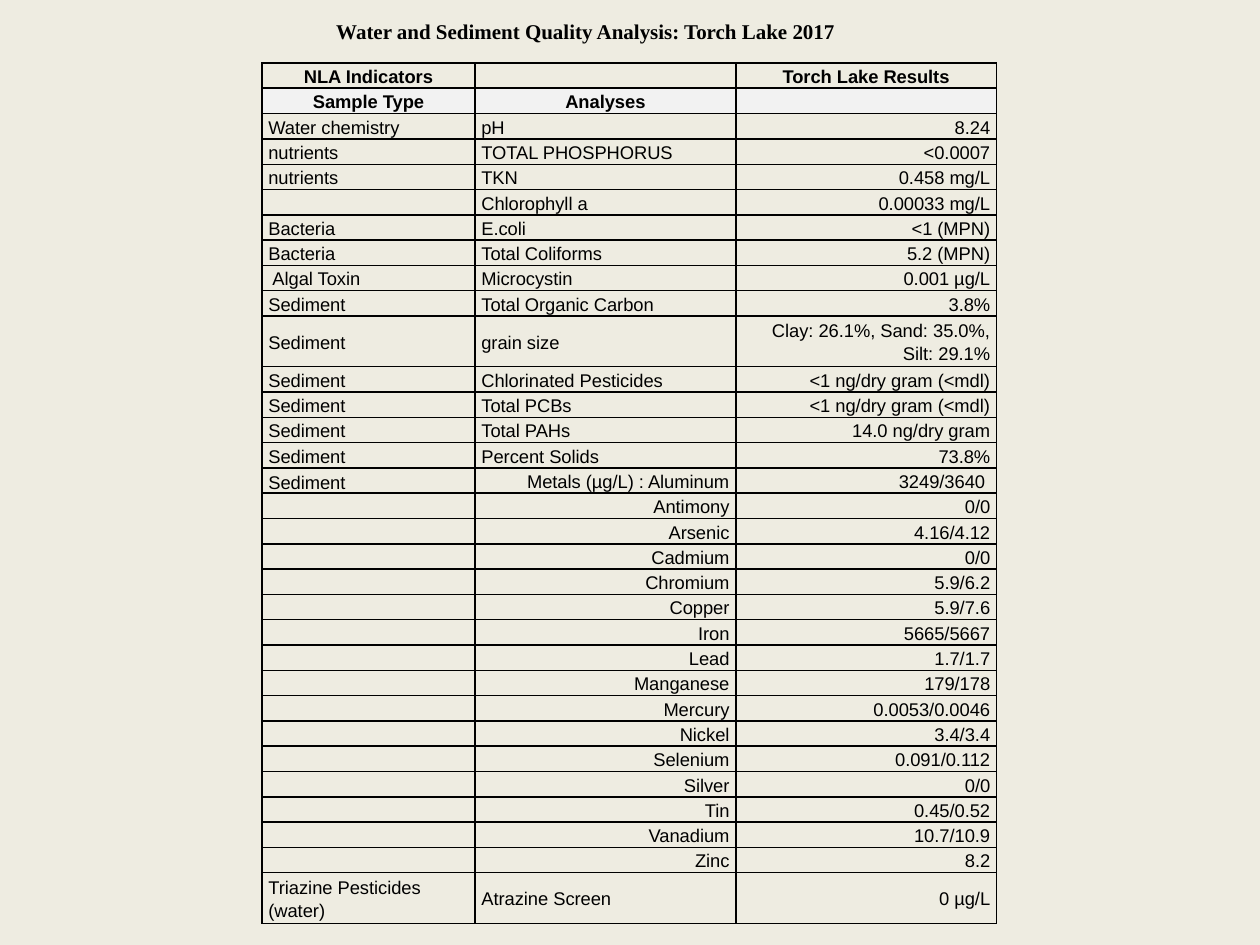
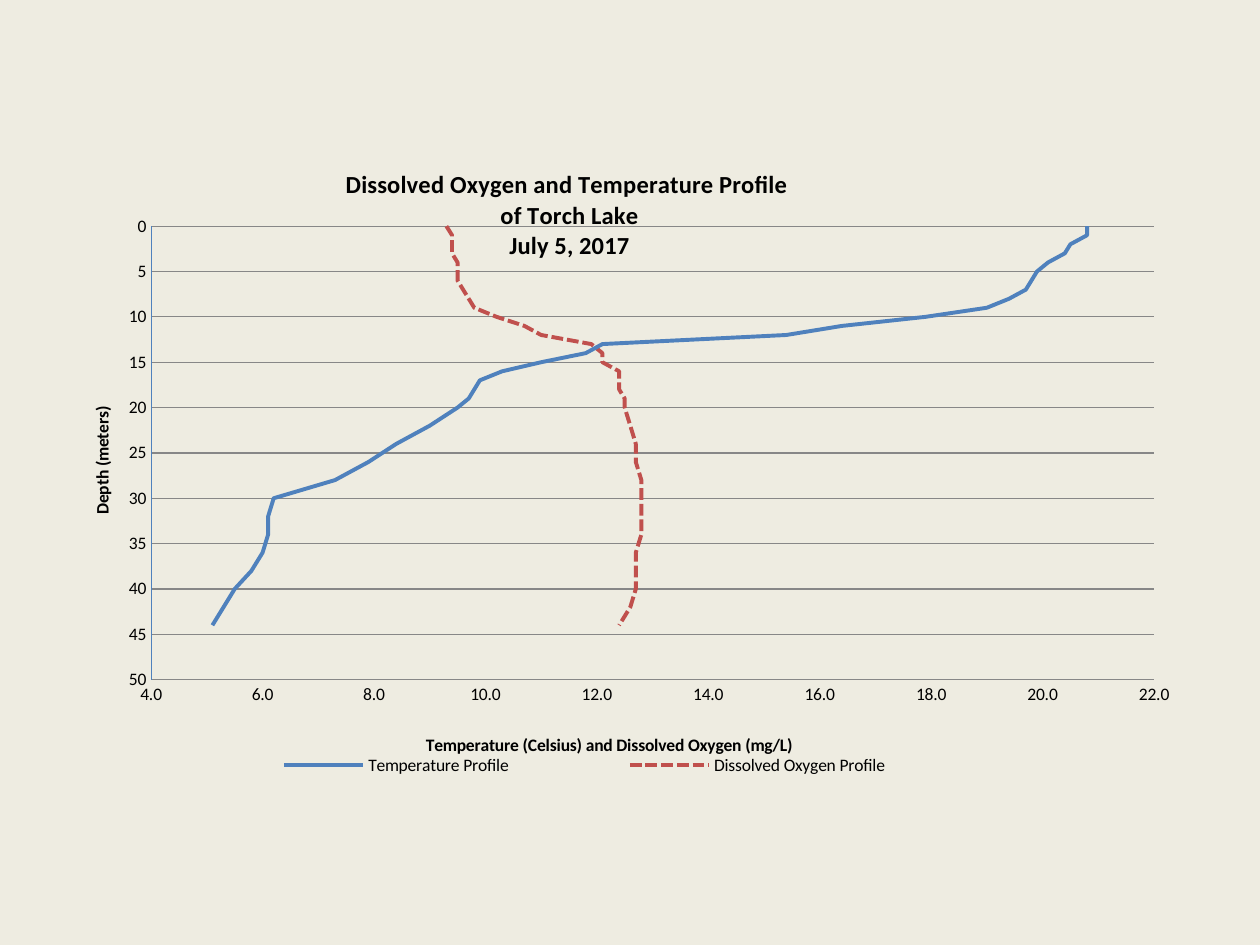
"""Build the Torch Lake water quality table and depth profile slides."""
import pptx
import pptx.chart.data
import pptx.dml.color
import pptx.enum.chart
import pptx.enum.dml
import pptx.enum.text
import pptx.oxml
import pptx.oxml.ns
import pptx.util

Pt = pptx.util.Pt
RGB = pptx.dml.color.RGBColor
ALIGN = pptx.enum.text.PP_ALIGN
ANCHOR = pptx.enum.text.MSO_ANCHOR
CH = pptx.enum.chart
qn = pptx.oxml.ns.qn
nsdecls = pptx.oxml.ns.nsdecls

CREAM = RGB(0xEE, 0xEC, 0xE1)
BLACK = RGB(0, 0, 0)
PALE = RGB(0xF2, 0xF2, 0xF2)
BLUE = RGB(0x4F, 0x81, 0xBD)
RED = RGB(0xC0, 0x50, 0x4D)
GREY = RGB(0x87, 0x87, 0x87)

HEADERS = [("NLA Indicators", "", "Torch Lake Results"),
           ("Sample Type", "Analyses", "")]
RESULTS = [
    ("Water chemistry", "pH", "8.24"),
    ("nutrients", "TOTAL PHOSPHORUS", "<0.0007"),
    ("nutrients", "TKN", "0.458 mg/L"),
    ("", "Chlorophyll a", "0.00033 mg/L"),
    ("Bacteria", "E.coli", "<1 (MPN)"),
    ("Bacteria", "Total Coliforms", "5.2 (MPN)"),
    (" Algal Toxin", "Microcystin", "0.001 µg/L"),
    ("Sediment", "Total Organic Carbon", "3.8%"),
    ("Sediment", "grain size", "Clay: 26.1%, Sand: 35.0%, Silt: 29.1%"),
    ("Sediment", "Chlorinated Pesticides", "<1 ng/dry gram (<mdl)"),
    ("Sediment", "Total PCBs", "<1 ng/dry gram (<mdl)"),
    ("Sediment", "Total PAHs", "14.0 ng/dry gram"),
    ("Sediment", "Percent Solids", "73.8%"),
]
METALS = [
    ("Metals (µg/L) : Aluminum", "3249/3640 "), ("Antimony", "0/0"),
    ("Arsenic", "4.16/4.12"), ("Cadmium", "0/0"), ("Chromium", "5.9/6.2"),
    ("Copper", "5.9/7.6"), ("Iron", "5665/5667"), ("Lead", "1.7/1.7"),
    ("Manganese", "179/178"), ("Mercury", "0.0053/0.0046"),
    ("Nickel", "3.4/3.4"), ("Selenium", "0.091/0.112"), ("Silver", "0/0"),
    ("Tin", "0.45/0.52"), ("Vanadium", "10.7/10.9"), ("Zinc", "8.2"),
]
PESTICIDE = ("Triazine Pesticides (water)", "Atrazine Screen", "0 µg/L")

DEPTHS = [*range(20), *range(20, 45, 2)]
TEMPERATURE = [20.8, 20.8, 20.5, 20.4, 20.1, 19.9, 19.8, 19.7, 19.4, 19, 17.9,
               16.4, 15.4, 12.1, 11.8, 11, 10.3, 9.9, 9.8, 9.7, 9.5, 9, 8.4,
               7.9, 7.3, 6.2, 6.1, 6.1, 6, 5.8, 5.5, 5.3, 5.1]
OXYGEN = [9.3, 9.4, 9.4, 9.4, 9.5, 9.5, 9.5, 9.6, 9.7, 9.8, 10.2, 10.7, 11,
          11.9, 12.1, 12.1, 12.4, 12.4, 12.4, 12.5, 12.5, 12.6, 12.7, 12.7,
          12.8, 12.8, 12.8, 12.8, 12.7, 12.7, 12.7, 12.6, 12.4]


class Deck:
    """Hold the shared style and the current slide."""

    def __init__(self):
        self.prs = pptx.Presentation()
        self.prs.slide_width = pptx.util.Inches(10)
        self.prs.slide_height = pptx.util.Inches(7.5)

    def slide(self):
        """Start a blank slide on the shared background."""
        self.s = self.prs.slides.add_slide(self.prs.slide_layouts[6])
        self.s.background.fill.solid()
        self.s.background.fill.fore_color.rgb = CREAM

    def box(self, x, y, w, h):
        """Turn shares of the slide into lengths."""
        sw, sh = self.prs.slide_width, self.prs.slide_height
        return [round(n) for n in (x * sw, y * sh, w * sw, h * sh)]

    def run(self, p, text, size, font, bold=False):
        """Add one styled run."""
        r = p.add_run()
        r.text = text
        r.font.size, r.font.name, r.font.bold = Pt(size), font, bold
        r.font.color.rgb = BLACK

    def title(self, text, area):
        """Add the slide title."""
        tf = self.s.shapes.add_textbox(*self.box(*area)).text_frame
        tf.word_wrap = False
        tf.vertical_anchor = ANCHOR.MIDDLE
        tf.auto_size = pptx.enum.text.MSO_AUTO_SIZE.SHAPE_TO_FIT_TEXT
        tf.paragraphs[0].alignment = ALIGN.CENTER
        self.run(tf.paragraphs[0], text, 12, "Times New Roman", True)

    def cell(self, cell, text, align, bold, top, bottom, fill, anchor):
        """Fill and border one table cell."""
        cell.margin_left = cell.margin_right = pptx.util.Inches(0.05)
        cell.margin_top = cell.margin_bottom = 0
        cell.vertical_anchor = anchor
        p = cell.text_frame.paragraphs[0]
        p.alignment, p.line_spacing = align, 1.15
        if text:
            self.run(p, text, 10.5, "Arial", bold)
        else:
            p._p.append(pptx.oxml.parse_xml(
                f'<a:endParaRPr {nsdecls("a")} sz="1050"/>'))
        tcPr = cell._tc.get_or_add_tcPr()
        for side, width in zip("LRTB", (1, 1, top, bottom)):
            tcPr.append(pptx.oxml.parse_xml(
                f'<a:ln{side} {nsdecls("a")} w="{Pt(width)}"><a:solidFill>'
                f'<a:srgbClr val="{BLACK}"/></a:solidFill></a:ln{side}>'))
        if fill:
            cell.fill.solid()
            cell.fill.fore_color.rgb = fill
        else:
            cell.fill.background()

    def table(self, area, shares, units):
        """Add the results table, with row heights in equal units."""
        metals = [("" if i else "Sediment", *m) for i, m in enumerate(METALS)]
        rows = HEADERS + RESULTS + metals + [PESTICIDE]
        first_metal = len(HEADERS + RESULTS)
        x, y, w, h = self.box(*area)
        tbl = self.s.shapes.add_table(len(rows), len(shares), x, y, w, h).table
        for col, share in zip(tbl.columns, shares):
            col.width = round(w * share)
        heights = [units.get(row[0] + row[1], 1) for row in rows]
        for i, row in enumerate(rows):
            tbl.rows[i].height = round(h * heights[i] / sum(heights))
            head = i < len(HEADERS)
            metal = first_metal <= i < len(rows) - 1
            for j, text in enumerate(row):
                right = j == 2 or (j == 1 and metal)
                align = (ALIGN.CENTER if head else
                         ALIGN.RIGHT if right else ALIGN.LEFT)
                low = i == first_metal and j == 0
                self.cell(tbl.cell(i, j), text, align, head,
                          1.5 if i == 1 else 1, 1.5 if i == 0 else 1,
                          PALE if i == 1 else None,
                          ANCHOR.BOTTOM if low else ANCHOR.MIDDLE)

    def place(self, element, x, y, w=None, h=None, after=None, inner=False):
        """Give a chart part a place in shares of the chart."""
        for old in element.findall(qn("c:layout")):
            element.remove(old)
        target = '<c:layoutTarget val="inner"/>' if inner else ""
        modes = '<c:xMode val="edge"/><c:yMode val="edge"/>'
        sizes = "".join(f'<c:{k} val="{v}"/>' for k, v in
                        zip("xywh", (x, y, w, h)) if v is not None)
        layout = pptx.oxml.parse_xml(
            f'<c:layout {nsdecls("c")}><c:manualLayout>{target}{modes}{sizes}'
            '</c:manualLayout></c:layout>')
        if after:
            element.find(qn(after)).addnext(layout)
        else:
            element.insert(0, layout)

    def chart_title(self, title, lines, size, x, y):
        """Write and place a chart or axis title."""
        tf = title.text_frame
        for i, line in enumerate(lines):
            p = tf.add_paragraph() if i else tf.paragraphs[0]
            p.alignment = ALIGN.CENTER
            self.run(p, line, size, "Calibri", True)
        self.place(title._element, x, y, after="c:tx")
        return tf

    def axis(self, axis, low, high, step, color, digits):
        """Set the scale and look of an axis."""
        axis.minimum_scale, axis.maximum_scale = low, high
        axis.major_unit = step
        axis.major_tick_mark = axis.minor_tick_mark = CH.XL_TICK_MARK.NONE
        axis.tick_label_position = CH.XL_TICK_LABEL_POSITION.NEXT_TO_AXIS
        axis.tick_labels.number_format = digits
        axis.tick_labels.number_format_is_linked = False
        axis.format.line.color.rgb = color
        axis.format.line.width = Pt(0.75)
        axis.has_major_gridlines = False

    def profile(self, area, lines, x_title, y_title, series):
        """Add the depth profile chart."""
        data = pptx.chart.data.XyChartData()
        for name, values, _, _ in series:
            points = data.add_series(name)
            for value, depth in zip(values, DEPTHS):
                points.add_data_point(value, depth)
        chart = self.s.shapes.add_chart(
            CH.XL_CHART_TYPE.XY_SCATTER_SMOOTH_NO_MARKERS,
            *self.box(*area), data).chart
        chart.font.size, chart.font.name = Pt(10), "Calibri"
        chart.font.color.rgb = BLACK
        chart.plots[0].vary_by_categories = False
        for ser, (_, _, color, dash) in zip(chart.plots[0].series, series):
            ser.smooth = True
            ser.format.line.color.rgb = color
            ser.format.line.width = Pt(2.25)
            ser.format.line.dash_style = dash

        across, down = chart.category_axis, chart.value_axis
        self.axis(across, 4, 22, 2, GREY, "0.0")
        self.axis(down, 0, 50, 5, BLUE, "0")
        down.reverse_order = True
        down.crosses = CH.XL_AXIS_CROSSES.MAXIMUM
        down.has_major_gridlines = True
        down.major_gridlines.format.line.color.rgb = GREY
        down.major_gridlines.format.line.width = Pt(0.75)

        chart.has_title = True
        self.chart_title(chart.chart_title, lines, 14, 0.25, 0.01)
        chart.chart_title.include_in_layout = True
        self.chart_title(across.axis_title, [x_title], 10, 0.32, 0.91)
        tf = self.chart_title(down.axis_title, [y_title], 10, 0.03, 0.39)
        body = tf._txBody.find(qn("a:bodyPr"))
        body.set("rot", "-5400000")
        body.set("vert", "horz")

        chart.has_legend = True
        chart.legend.position = CH.XL_LEGEND_POSITION.BOTTOM
        chart.legend.include_in_layout = False
        self.place(chart.legend._element, 0.1, 0.94, 0.72, 0.05,
                   after="c:legendPos")
        plot = chart._chartSpace.find(".//" + qn("c:plotArea"))
        self.place(plot, 0.085, 0.109, 0.868, 0.72, inner=True)


def main():
    """Build both slides and save them."""
    deck = Deck()
    deck.slide()
    deck.table((0.208, 0.0667, 0.583, 0.912), (0.29, 0.355, 0.355),
               {"Sedimentgrain size": 2, "".join(PESTICIDE[:2]): 2})
    deck.title("Water and Sediment Quality Analysis: Torch Lake 2017",
               (0.255, 0.0133, 0.42, 0.04))
    deck.slide()
    dash = pptx.enum.dml.MSO_LINE
    deck.profile(
        (0.042, 0.1667, 0.917, 0.6667),
        ["Dissolved Oxygen and Temperature Profile ", "of Torch Lake",
         "July 5, 2017"],
        "Temperature (Celsius) and Dissolved Oxygen (mg/L)", "Depth (meters)",
        [("Temperature Profile", TEMPERATURE, BLUE, dash.SOLID),
         ("Dissolved Oxygen Profile", OXYGEN, RED, dash.SQUARE_DOT)])
    deck.prs.save("out.pptx")


if __name__ == "__main__":
    main()
